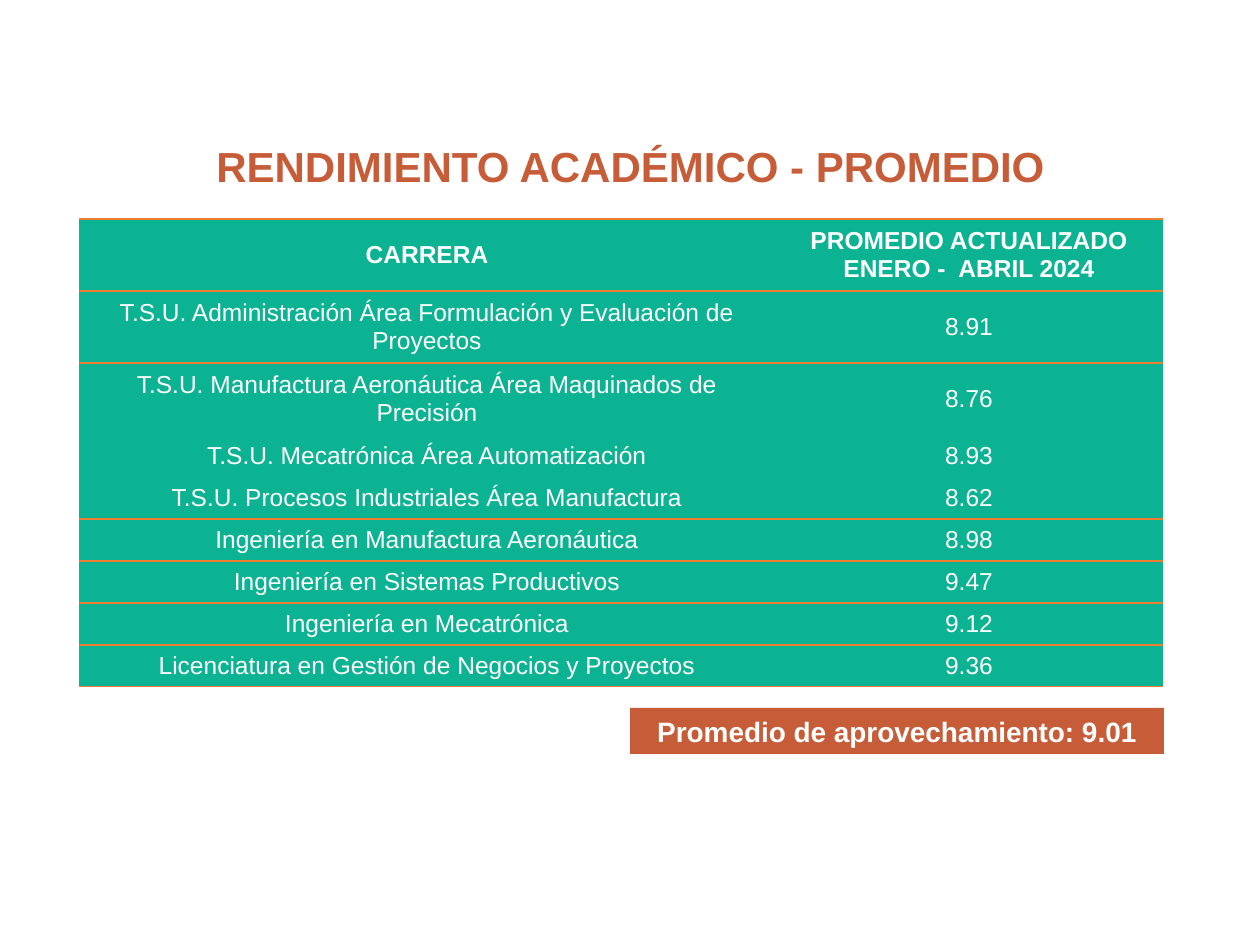
"""Build the slide with the average grades of each degree programme."""
import pptx
import pptx.dml.color
import pptx.enum.shapes
import pptx.enum.text
import pptx.oxml.ns
import pptx.util
from lxml import etree

TITLE = "RENDIMIENTO ACADÉMICO - PROMEDIO"
HEADER = ("CARRERA", "PROMEDIO ACTUALIZADO\nENERO -  ABRIL 2024")
AVERAGES = [
    ("T.S.U. Administración Área Formulación y Evaluación de Proyectos", "8.91"),
    ("T.S.U. Manufactura Aeronáutica Área Maquinados de Precisión", "8.76"),
    ("T.S.U. Mecatrónica Área Automatización", "8.93"),
    ("T.S.U. Procesos Industriales Área Manufactura", "8.62"),
    ("Ingeniería en Manufactura Aeronáutica", "8.98"),
    ("Ingeniería en Sistemas Productivos", "9.47"),
    ("Ingeniería en Mecatrónica", "9.12"),
    ("Licenciatura en Gestión de Negocios y Proyectos", "9.36"),
]
OVERALL = "Promedio de aprovechamiento: 9.01"

RUST = pptx.dml.color.RGBColor(0xC6, 0x5D, 0x38)
TEAL = pptx.dml.color.RGBColor(0x0C, 0xB3, 0x93)
ORANGE = pptx.dml.color.RGBColor(0xED, 0x7D, 0x31)
WHITE = pptx.dml.color.RGBColor(0xFF, 0xFF, 0xFF)

FONT = "Arial"
EMU_PER_PX = 914400 // 126
TABLE_LEFT, TABLE_TOP = 79, 219
COLUMN_WIDTHS = (696, 388)
TWO_LINE_ROWS = 3
TALL_ROW, SHORT_ROW = 72, 42
UNRULED_EDGES = (3, 4)


def px(*lengths):
    return [pptx.util.Emu(length * EMU_PER_PX) for length in lengths]


def write(frame, text, size, color, bold):
    frame.text = text
    frame.word_wrap = True
    frame.vertical_anchor = pptx.enum.text.MSO_ANCHOR.MIDDLE
    for paragraph in frame.paragraphs:
        paragraph.alignment = pptx.enum.text.PP_ALIGN.CENTER
        for run in paragraph.runs:
            run.font.name = FONT
            run.font.size = pptx.util.Pt(size)
            run.font.bold = bold
            run.font.color.rgb = color


def set_borders(cell, top, bottom):
    properties = cell._tc.get_or_add_tcPr()
    sides = (("lnL", False), ("lnR", False), ("lnT", top), ("lnB", bottom))
    for position, (side, ruled) in enumerate(sides):
        line = etree.Element(pptx.oxml.ns.qn(f"a:{side}"), w=str(pptx.util.Pt(1)))
        if ruled:
            fill = etree.SubElement(line, pptx.oxml.ns.qn("a:solidFill"))
            etree.SubElement(fill, pptx.oxml.ns.qn("a:srgbClr"), val=str(ORANGE))
        else:
            etree.SubElement(line, pptx.oxml.ns.qn("a:noFill"))
        properties.insert(position, line)


def add_averages(slide):
    rows = [HEADER] + AVERAGES
    heights = [TALL_ROW if i < TWO_LINE_ROWS else SHORT_ROW for i in range(len(rows))]
    table = slide.shapes.add_table(
        len(rows), len(HEADER),
        *px(TABLE_LEFT, TABLE_TOP, sum(COLUMN_WIDTHS), sum(heights))).table
    for column, width in zip(table.columns, px(*COLUMN_WIDTHS)):
        column.width = width
    for i, (texts, height) in enumerate(zip(rows, px(*heights))):
        table.rows[i].height = height
        for cell, text in zip(table.rows[i].cells, texts):
            write(cell.text_frame, text, 14, WHITE, i == 0)
            cell.vertical_anchor = pptx.enum.text.MSO_ANCHOR.MIDDLE
            cell.fill.solid()
            cell.fill.fore_color.rgb = TEAL
            set_borders(cell, i not in UNRULED_EDGES, i + 1 not in UNRULED_EDGES)


def add_overall(slide):
    banner = slide.shapes.add_shape(
        pptx.enum.shapes.MSO_SHAPE.RECTANGLE, *px(630, 708, 534, 46))
    banner.shadow.inherit = False
    banner.fill.solid()
    banner.fill.fore_color.rgb = RUST
    banner.line.fill.background()
    write(banner.text_frame, OVERALL, 16, WHITE, True)


def main():
    presentation = pptx.Presentation()
    presentation.slide_width = pptx.util.Inches(10)
    presentation.slide_height = pptx.util.Inches(7.5)
    slide = presentation.slides.add_slide(
        presentation.slide_layouts.get_by_name("Title Only"))
    heading = slide.shapes.title
    heading.left, heading.top, heading.width, heading.height = px(156, 134, 949, 63)
    write(heading.text_frame, TITLE, 24, RUST, True)
    add_averages(slide)
    add_overall(slide)
    presentation.save("out.pptx")


if __name__ == "__main__":
    main()
